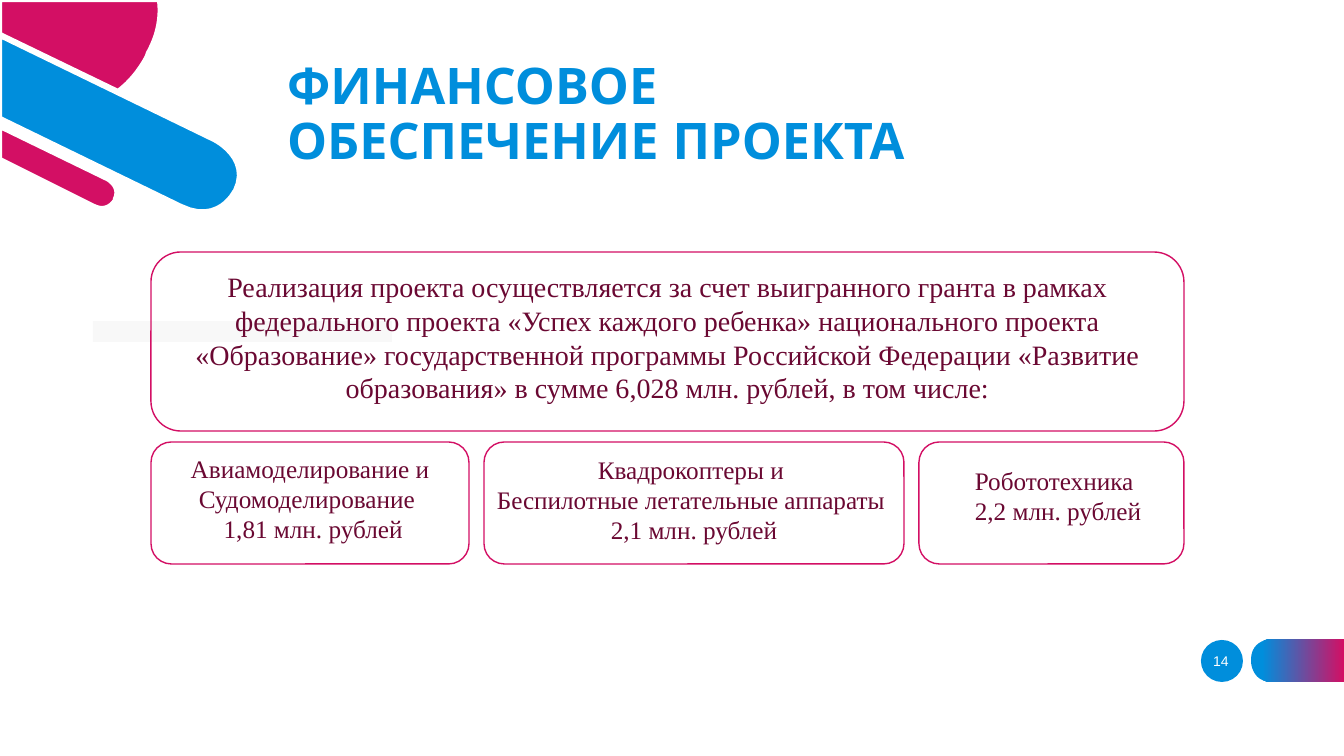
"""Build the slide on the project's funding: one grant box over three shares."""
from pptx import Presentation, util as u
from pptx.dml.color import RGBColor as Rgb
from pptx.enum import shapes as sh, text as tx

THEME = {
    "blue": Rgb(0x00, 0x8E, 0xDC), "pink": Rgb(0xD3, 0x0F, 0x64),
    "wine": Rgb(0x6A, 0x08, 0x32), "pale": Rgb(0xF8, 0xF8, 0xF8),
    "white": Rgb(0xFF, 0xFF, 0xFF),
    "head": 36, "lead": 20, "body": 18, "page": 10,
    "title": "Quicksand", "serif": "Times New Roman", "sans": "Arial",
}
PX = 914400 / 100.8
STEPS = 12

deck = Presentation()
deck.slide_width, deck.slide_height = u.Emu(round(1344 * PX)), u.Emu(round(756 * PX))
slide = deck.slides.add_slide(deck.slide_layouts[5])
items = slide.shapes


def blob(start, parts):
    """Draw a closed outline from points and cubic curves in px."""
    dots = [start]
    for part in parts:
        if len(part) == 2:
            dots.append(part)
            continue
        a, b, c, d = dots[-1], part[:2], part[2:4], part[4:]
        for n in range(1, STEPS + 1):
            t = n / STEPS
            s = 1 - t
            dots.append(tuple(s**3 * a[i] + 3 * s * s * t * b[i] + 3 * s * t * t * c[i]
                              + t**3 * d[i] for i in (0, 1)))
    pts = [(round(x * PX), round(y * PX)) for x, y in dots]
    pen = items.build_freeform(*pts[0])
    pen.add_line_segments(pts[1:], close=True)
    shape = pen.convert_to_shape()
    shape.shadow.inherit = False
    return shape


def note(box, lines, size, align, font="serif", color="wine"):
    """Add a wrapped text box with one paragraph per line."""
    frame = items.add_textbox(*(round(v * PX) for v in box)).text_frame
    frame.word_wrap = True
    frame.text = "\n".join(lines)
    for para in frame.paragraphs:
        para.alignment = align
        para.font.name, para.font.size = THEME[font], u.Pt(THEME[size])
        para.font.color.rgb = THEME[color]
    return frame


corner = [
    ("pink", (0, 0), [(159, 0), (161, 15, 159, 33, 148, 53), (147, 56),
                      (147, 56, 137, 77, 118, 91), (0, 34)]),
    ("pink", (0, 127), [(107, 179), (107, 179, 121, 186, 115, 199), (115, 200),
                        (115, 200, 108, 213, 94, 206), (0, 159)]),
    ("blue", (0, 36), [(214, 140), (214, 140, 251, 158, 235, 191), (234, 192),
                       (234, 192, 218, 224, 181, 206), (0, 118)]),
]
for color, start, parts in corner:
    shape = blob(start, parts)
    shape.fill.solid()
    shape.fill.fore_color.rgb = THEME[color]
    shape.line.color.rgb = THEME["white"]
    shape.line.width = u.Pt(3)

tab = blob((1272, 682), [(1344, 682), (1344, 639), (1272, 639),
                         (1272, 639, 1251, 639, 1251, 660), (1251, 661),
                         (1251, 661, 1251, 682, 1272, 682)])
tab.line.fill.background()
tab.fill.gradient()
tab.fill.gradient_angle = 0
for stop, color, pos in zip(tab.fill.gradient_stops, ("blue", "pink"), (0.12, 1)):
    stop.color.rgb = THEME[color]
    stop.position = pos

kinds = sh.MSO_SHAPE
panels = [
    (kinds.OVAL, (1201, 640, 42, 42), "blue"),
    (kinds.RECTANGLE, (93, 321, 299, 21), "pale"),
    (kinds.ROUNDED_RECTANGLE, (151, 252, 1033, 179), None),
    (kinds.ROUNDED_RECTANGLE, (151, 442, 318, 122), None),
    (kinds.ROUNDED_RECTANGLE, (484, 442, 420, 122), None),
    (kinds.ROUNDED_RECTANGLE, (919, 442, 265, 122), None),
]
for kind, box, color in panels:
    shape = items.add_shape(kind, *(round(v * PX) for v in box))
    shape.shadow.inherit = False
    if color:
        shape.fill.solid()
        shape.fill.fore_color.rgb = THEME[color]
        shape.line.fill.background()
    else:
        shape.fill.background()
        shape.line.color.rgb = THEME["pink"]
        shape.line.width = u.Pt(1)

title = items.title
title.left, title.top, title.width, title.height = (
    round(v * PX) for v in (277, 101, 780, 74))
frame = title.text_frame
frame.text = "ФИНАНСОВОЕ \vОБЕСПЕЧЕНИЕ ПРОЕКТА"
frame.auto_size = tx.MSO_AUTO_SIZE.NONE
frame.vertical_anchor = tx.MSO_ANCHOR.BOTTOM
head = frame.paragraphs[0]
head.alignment, head.line_spacing = tx.PP_ALIGN.LEFT, 0.9
head.font.name, head.font.size = THEME["title"], u.Pt(THEME["head"])
head.font.bold = True
head.font.color.rgb = THEME["blue"]

mid = tx.PP_ALIGN.CENTER
note((173, 265, 989, 146), [
    "Реализация проекта осуществляется за счет выигранного гранта в рамках "
    "федерального проекта «Успех каждого ребенка» национального проекта "
    "«Образование» государственной программы Российской Федерации «Развитие "
    "образования» в сумме 6,028 млн. рублей, в том числе:"], "lead", mid)
note((151, 448, 318, 102), ["Авиамоделирование и Судомоделирование ",
                            " 1,81 млн. рублей"], "body", mid)
note((358, 449, 672, 102), ["Квадрокоптеры и ", "Беспилотные летательные аппараты ",
                            "2,1 млн. рублей"], "body", mid)
note((965, 460, 272, 72), ["Робототехника ", "2,2 млн. рублей"], "body",
     tx.PP_ALIGN.JUSTIFY)
page = note((1191, 641, 60, 40), ["14"], "page", mid, "sans", "white")
page.vertical_anchor = tx.MSO_ANCHOR.MIDDLE

deck.save("out.pptx")
